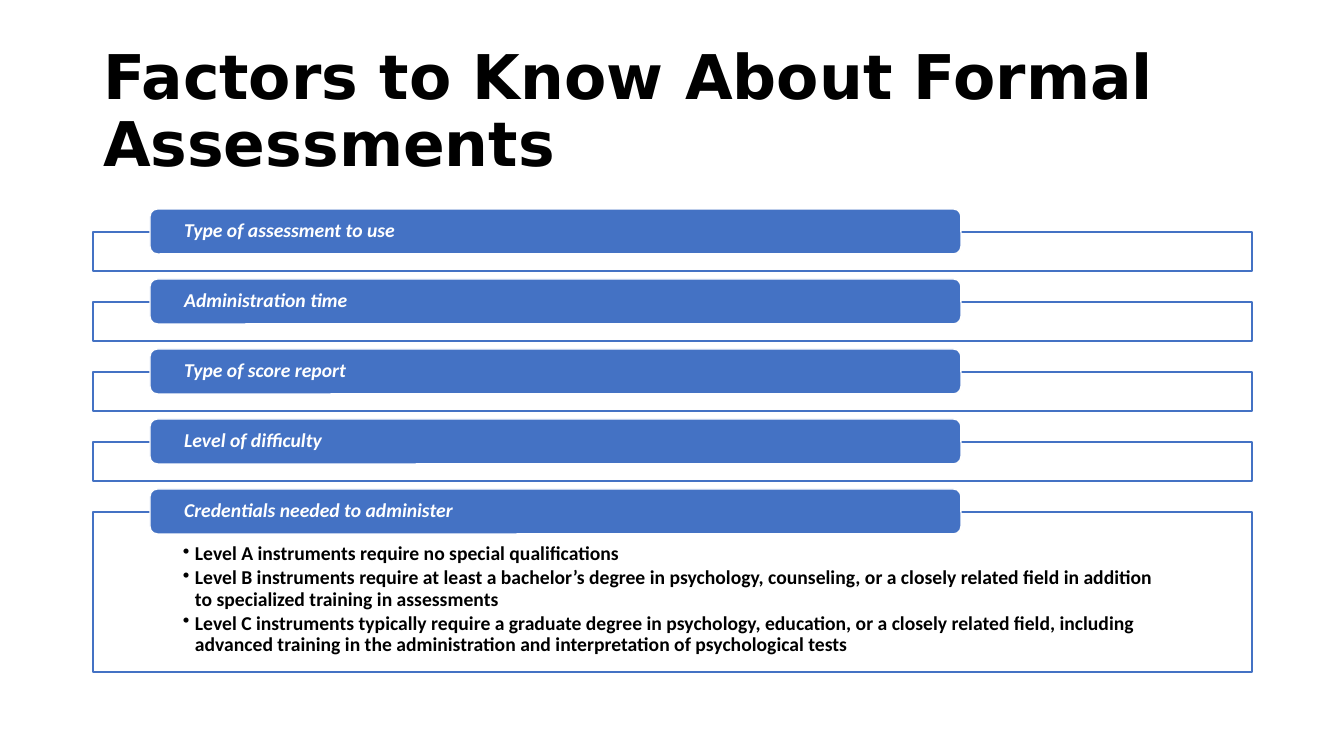
"""Build the slide on factors to know about formal assessments."""
from lxml import etree
from pptx import Presentation
from pptx import util as u
from pptx.dml import color
from pptx.enum import shapes, text
from pptx.oxml import ns

SCALE = 914400 / 100.8


def px(length):
    """Turn whole px into EMU."""
    return u.Emu(round(length * SCALE))


def rgb(value):
    """Turn a hex string into a colour."""
    return color.RGBColor.from_string(value)


BLUE, WHITE, BLACK = "4472C4", "FFFFFF", "000000"
FACTORS = [
    "Type of assessment to use",
    "Administration time",
    "Type of score report",
    "Level of difficulty",
    "Credentials needed to administer",
]
LEVELS = [
    "Level A instruments require no special qualifications",
    "Level B instruments require at least a bachelor’s degree in psychology, "
    "counseling, or a closely related field in addition to specialized training in assessments",
    "Level C instruments typically require a graduate degree in psychology, education, "
    "or a closely related field, including advanced training in the administration "
    "and interpretation of psychological tests",
]
PITCH = 70
TITLE_FONT = {"name": "DejaVu Sans", "size": u.Pt(44), "bold": True}
LEVEL_FONT = {"name": "Calibri", "size": u.Pt(14), "bold": True}
FACTOR_FONT = {**LEVEL_FONT, "italic": True}

deck = Presentation()
deck.slide_width, deck.slide_height = px(1344), px(756)
page = deck.slides.add_slide(deck.slide_layouts[5])

title = page.shapes.title
title.left, title.top, title.width, title.height = px(93), px(40), px(1159), px(146)
title.text_frame.text = "Factors to Know About Formal\vAssessments"
title.text_frame.auto_size = text.MSO_AUTO_SIZE.NONE
title.text_frame.vertical_anchor = text.MSO_ANCHOR.MIDDLE
styled = [(title.text_frame.paragraphs[0], TITLE_FONT, BLACK)]

for row, factor in enumerate(FACTORS):
    last = row == len(FACTORS) - 1
    panel = page.shapes.add_shape(
        shapes.MSO_SHAPE.RECTANGLE,
        px(93), px(232 + PITCH * row), px(1159), px(160 if last else 39))
    tab = page.shapes.add_shape(
        shapes.MSO_SHAPE.ROUNDED_RECTANGLE,
        px(150), px(209 + PITCH * row), px(811), px(45))
    for box, fill, line in ((panel, WHITE, BLUE), (tab, BLUE, WHITE)):
        box.shadow.inherit = False
        box.fill.solid()
        box.fill.fore_color.rgb = rgb(fill)
        box.line.color.rgb = rgb(line)
        box.line.width = u.Pt(1)

    frame = tab.text_frame
    frame.text = factor
    frame.word_wrap = True
    frame.vertical_anchor = text.MSO_ANCHOR.MIDDLE
    frame.margin_left = frame.margin_right = px(32)
    frame.margin_top = frame.margin_bottom = 0
    styled.append((frame.paragraphs[0], FACTOR_FONT, WHITE))

frame = panel.text_frame
frame.text = "\n".join(LEVELS)
frame.word_wrap = True
frame.vertical_anchor = text.MSO_ANCHOR.TOP
frame.margin_left = frame.margin_right = px(90)
frame.margin_top, frame.margin_bottom = px(32), px(11)
for para in frame.paragraphs:
    para.space_after = u.Pt(2)
    props = para._p.get_or_add_pPr()
    props.set("marL", str(px(12)))
    props.set("indent", str(px(-12)))
    etree.SubElement(props, ns.qn("a:buChar"), char="•")
    styled.append((para, LEVEL_FONT, BLACK))

for para, font, ink in styled:
    para.alignment = text.PP_ALIGN.LEFT
    para.line_spacing = 0.9
    for span in para.runs:
        for name, value in font.items():
            setattr(span.font, name, value)
        span.font.color.rgb = rgb(ink)

deck.save("out.pptx")
